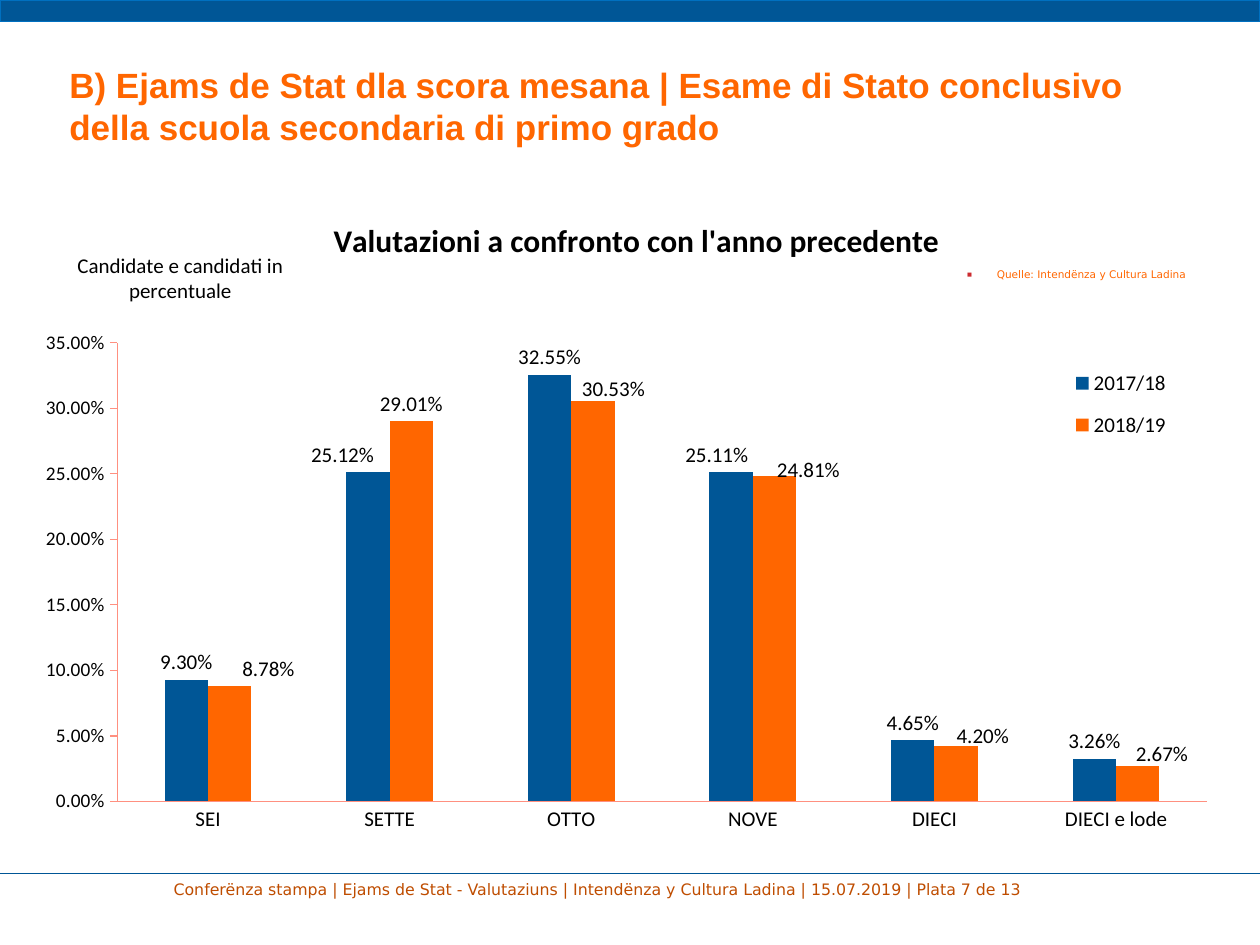
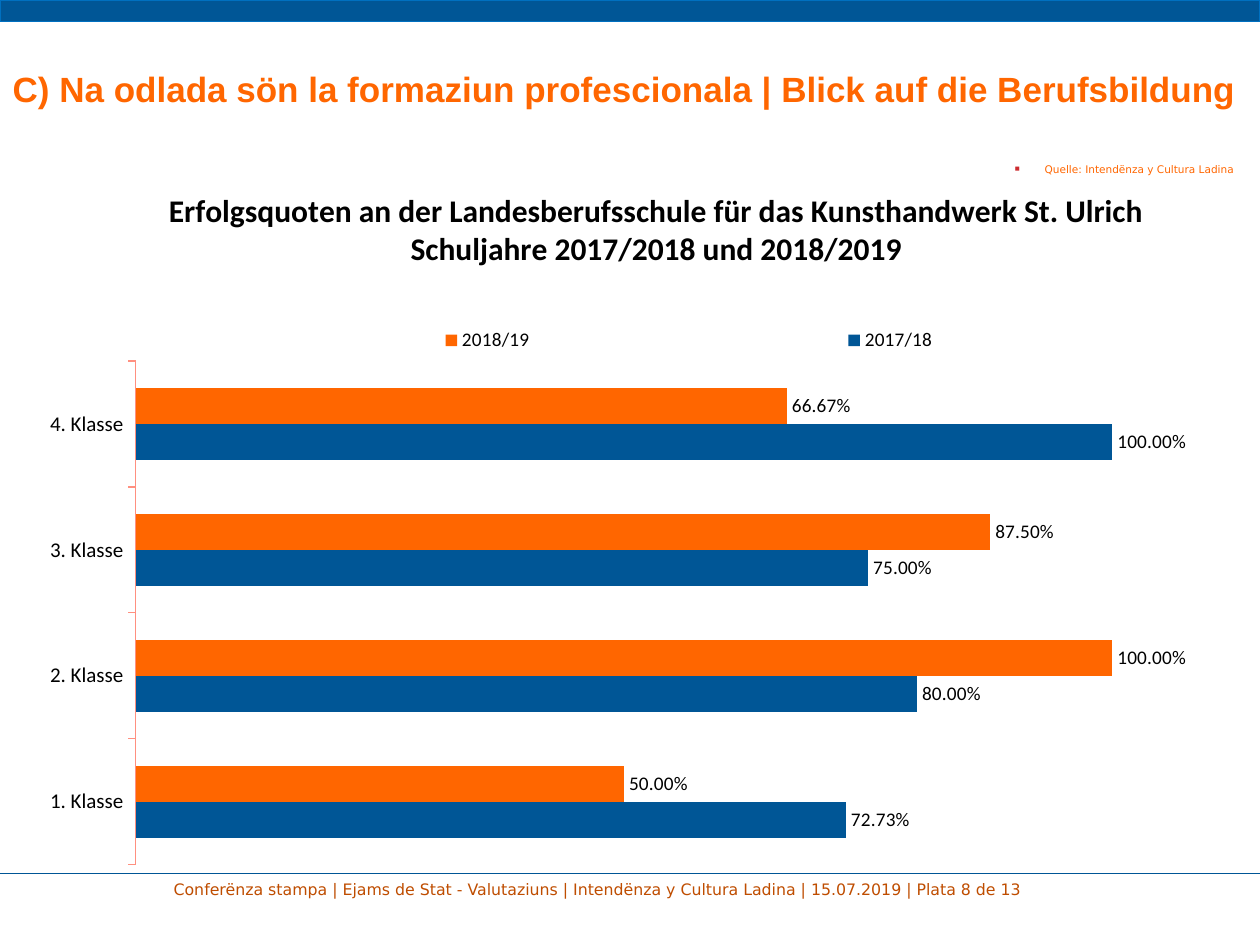
from pptx import Presentation
from pptx.chart.data import CategoryChartData
from pptx.dml.color import RGBColor
from pptx.enum.chart import XL_CHART_TYPE, XL_LABEL_POSITION, XL_LEGEND_POSITION, XL_TICK_MARK
from pptx.enum.shapes import MSO_CONNECTOR, MSO_SHAPE
from pptx.enum.text import MSO_ANCHOR, PP_ALIGN
from pptx.oxml import parse_xml
from pptx.oxml.ns import nsdecls, qn
from pptx.util import Inches, Pt

COLORS = {
    "blue": "005696",
    "band_line": "0070C0",
    "orange": "FF6600",
    "footer": "BF4D00",
    "bullet": "CC2C30",
    "axis": "FF9080",
    "black": "000000",
}
SERIES_COLORS = {"2017/18": "blue", "2018/19": "orange"}
FOOTER = ("Conferënza stampa | Ejams de Stat - Valutaziuns | "
          "Intendënza y Cultura Ladina | 15.07.2019 | Plata {} de 13")
SOURCE = "Quelle: Intendënza y Cultura Ladina"
PERCENT = "0.00%"

SLIDES = [
    {
        "page": 7,
        "title": "B) Ejams de Stat dla scora mesana | Esame di Stato conclusivo "
                 "della scuola secondaria di primo grado",
        "title_box": (0.45, 0.21, 9, 1.25),
        "source_at": (7.3, 2.1),
        "chart": {
            "type": XL_CHART_TYPE.COLUMN_CLUSTERED,
            "box": (0.2, 1.25, 9.61, 5.49),
            "title": ["Valutazioni a confronto con l'anno precedente"],
            "title_at": (0.25, 0.08),
            "axis_title": "Candidate e candidati in percentuale",
            "axis_title_at": (0.04, 0.13),
            "plot": (0.076, 0.268, 0.9, 0.663),
            "legend": (XL_LEGEND_POSITION.BOTTOM, (0.855, 0.284, 0.1, 0.145)),
            "legend_size": 12,
            "label_size": 12,
            "gap": 219,
            "maximum": 0.35,
            "unit": 0.05,
            "tick": XL_TICK_MARK.NONE,
            "categories": ["SEI", "SETTE", "OTTO", "NOVE", "DIECI", "DIECI e lode"],
            "series": {
                "2017/18": [0.093, 0.2512, 0.3255, 0.2511, 0.0465, 0.0326],
                "2018/19": [0.0878, 0.2901, 0.3053, 0.2481, 0.042, 0.0267],
            },
            "label_shifts": {
                "2017/18": {1: (-0.021, 0), 3: (-0.012, 0)},
                "2018/19": {0: (0.032, 0), 2: (0.017, 0.007), 3: (0.028, 0.016),
                            4: (0.022, 0.01), 5: (0.02, 0.007)},
            },
        },
    },
    {
        "page": 8,
        "title": "C) Na odlada sön la formaziun profescionala | "
                 "Blick auf die Berufsbildung",
        "title_box": (0, 0.08, 10, 1.25),
        "source_at": (7.68, 1.26),
        "chart": {
            "type": XL_CHART_TYPE.BAR_CLUSTERED,
            "box": (-0.57, 1.36, 11.06, 5.86),
            "title": ["Erfolgsquoten an der Landesberufsschule für das Kunsthandwerk St. Ulrich",
                      "Schuljahre 2017/2018 und 2018/2019"],
            "title_at": (0.17, 0.02),
            "axis_title": None,
            "plot": (0.149, 0.257, 0.841, 0.682),
            "legend": (XL_LEGEND_POSITION.RIGHT, (0.147, 0.209, 0.798, 0.04)),
            "legend_size": 11,
            "label_size": 11,
            "gap": 150,
            "maximum": 1.2,
            "unit": 0.2,
            "tick": XL_TICK_MARK.OUTSIDE,
            "categories": ["1. Klasse", "2. Klasse", "3. Klasse", "4. Klasse"],
            "series": {
                "2017/18": [0.7273, 0.8, 0.75, 1],
                "2018/19": [0.5, 1, 0.875, 0.6667],
            },
            "label_shifts": {},
        },
    },
]


def rgb(name):
    return RGBColor.from_string(COLORS[name])


def style(font, name, size, color, bold=False):
    font.name = name
    font.size = Pt(size)
    font.bold = bold
    font.color.rgb = rgb(color)


def place(sp, box):
    sp.left, sp.top, sp.width, sp.height = map(Inches, box)


def set_layout(parent, index, values, edge=True, inner=False):
    for old in parent.findall(qn("c:layout")):
        parent.remove(old)
    target = '<c:layoutTarget val="inner"/>' if inner else ""
    modes = '<c:xMode val="edge"/><c:yMode val="edge"/>' if edge else ""
    sizes = "".join(f'<c:{tag} val="{v}"/>' for tag, v in zip("xywh", values))
    parent.insert(index, parse_xml(
        f'<c:layout {nsdecls("c")}><c:manualLayout>{target}{modes}{sizes}'
        '</c:manualLayout></c:layout>'))


def add_frame(s, page):
    line = s.shapes.add_connector(MSO_CONNECTOR.STRAIGHT, 0, Inches(6.93), Inches(10), Inches(6.93))
    line.line.color.rgb = rgb("blue")
    line.line.width = Pt(0.75)
    line._element.spPr.append(parse_xml(f'<a:effectLst {nsdecls("a")}/>'))

    footer = s.shapes.add_textbox(*map(Inches, (1.28, 6.93, 7.44, 0.27)))
    footer.text_frame.word_wrap = True
    p = footer.text_frame.paragraphs[0]
    p.text = FOOTER.format(page)
    style(p.runs[0].font, "DejaVu Sans", 9, "footer")

    band = s.shapes.add_shape(MSO_SHAPE.RECTANGLE, 0, 0, Inches(10), Inches(0.17))
    band.shadow.inherit = False
    band.fill.solid()
    band.fill.fore_color.rgb = rgb("blue")
    band.line.color.rgb = rgb("band_line")
    band.line.width = Pt(0.75)


def add_title(s, text, box):
    title = s.shapes.title
    place(title, box)
    tf = title.text_frame
    tf.text = text
    tf.word_wrap = True
    tf.vertical_anchor = MSO_ANCHOR.MIDDLE
    p = tf.paragraphs[0]
    p.alignment = PP_ALIGN.LEFT
    style(p.runs[0].font, "Arial", 20, "orange", True)


def add_source(s, at):
    tf = s.shapes.add_textbox(*map(Inches, (*at, 2.14, 0.05))).text_frame
    tf.word_wrap = True
    tf.margin_left = tf.margin_bottom = 0
    tf.margin_top, tf.margin_right = Inches(0.02), Inches(0.03)
    p = tf.paragraphs[0]
    p.text = SOURCE
    p.alignment = PP_ALIGN.RIGHT
    p.line_spacing = 1.1
    p.space_before = Pt(1.2)
    style(p.runs[0].font, "DejaVu Sans", 6, "orange")
    pPr = p._p.get_or_add_pPr()
    for bullet in (f'<a:buClr {nsdecls("a")}><a:srgbClr val="{COLORS["bullet"]}"/></a:buClr>',
                   f'<a:buSzPct {nsdecls("a")} val="50000"/>',
                   f'<a:buFont {nsdecls("a")} typeface="DejaVu Sans"/>',
                   f'<a:buChar {nsdecls("a")} char="■"/>'):
        pPr.append(parse_xml(bullet))


def format_axes(chart, spec_):
    cat, val = chart.category_axis, chart.value_axis
    cat.major_tick_mark = spec_["tick"]
    val.has_major_gridlines = False
    val.minimum_scale, val.maximum_scale = 0, spec_["maximum"]
    val.major_unit = spec_["unit"]
    val.major_tick_mark = XL_TICK_MARK.OUTSIDE
    for axis, size in ((cat, 12), (val, 11)):
        style(axis.tick_labels.font, "Calibri", size, "black")
        axis.format.line.color.rgb = rgb("axis")
        axis.format.line.width = Pt(0.75)
    val.tick_labels.number_format = PERCENT
    val.tick_labels.number_format_is_linked = False
    if not spec_["axis_title"]:
        val.visible = False
        return
    tf = val.axis_title.text_frame
    tf.text = spec_["axis_title"]
    style(tf.paragraphs[0].runs[0].font, "Calibri", 12, "black")
    tf._txBody.bodyPr.set("rot", "0")
    tf._txBody.bodyPr.set("vert", "horz")
    set_layout(val.axis_title._element, 1, spec_["axis_title_at"])


def format_series(ser, size, shifts):
    ser.format.fill.solid()
    ser.format.fill.fore_color.rgb = rgb(SERIES_COLORS[ser.name])
    labels = ser.data_labels
    labels.show_value = True
    labels.number_format = PERCENT
    labels.number_format_is_linked = False
    labels.position = XL_LABEL_POSITION.OUTSIDE_END
    style(labels.font, "Calibri", size, "black")
    for i, shift in shifts.items():
        label = ser.points[i].data_label
        label.position = XL_LABEL_POSITION.OUTSIDE_END
        style(label.font, "Calibri", size, "black")
    for dLbl in ser._element.iter(qn("c:dLbl")):
        i = int(dLbl.find(qn("c:idx")).get("val"))
        set_layout(dLbl, 1, shifts[i], edge=False)


def add_bar_chart(s, spec_):
    data = CategoryChartData(number_format=PERCENT)
    data.categories = spec_["categories"]
    for name, values in spec_["series"].items():
        data.add_series(name, values)
    chart = s.shapes.add_chart(spec_["type"], *map(Inches, spec_["box"]), data).chart
    style(chart.font, "Calibri", 10, "black")
    space = chart.element
    space.find(qn("c:chart")).addnext(parse_xml(
        f'<c:spPr {nsdecls("c", "a")}><a:noFill/><a:ln><a:noFill/></a:ln></c:spPr>'))

    tf = chart.chart_title.text_frame
    tf.text = "\n".join(spec_["title"])
    for p in tf.paragraphs:
        p.alignment = PP_ALIGN.CENTER
        style(p.runs[0].font, "Calibri", 18, "black", True)
    set_layout(chart.chart_title._element, 1, spec_["title_at"])

    position, box = spec_["legend"]
    chart.has_legend = True
    chart.legend.position = position
    chart.legend.include_in_layout = False
    style(chart.legend.font, "Calibri", spec_["legend_size"], "black")
    set_layout(chart.legend._element, 1, box)

    format_axes(chart, spec_)
    plot = chart.plots[0]
    plot.gap_width = spec_["gap"]
    plot.overlap = 0
    plot.vary_by_categories = False
    for ser in plot.series:
        format_series(ser, spec_["label_size"], spec_["label_shifts"].get(ser.name, {}))
    set_layout(next(space.iter(qn("c:plotArea"))), 0, spec_["plot"], inner=True)


def main():
    prs = Presentation()
    prs.slide_width, prs.slide_height = Inches(10), Inches(7.5)
    for content in SLIDES:
        s = prs.slides.add_slide(prs.slide_layouts[5])
        add_frame(s, content["page"])
        add_title(s, content["title"], content["title_box"])
        add_source(s, content["source_at"])
        add_bar_chart(s, content["chart"])
    prs.save("out.pptx")


if __name__ == "__main__":
    main()
